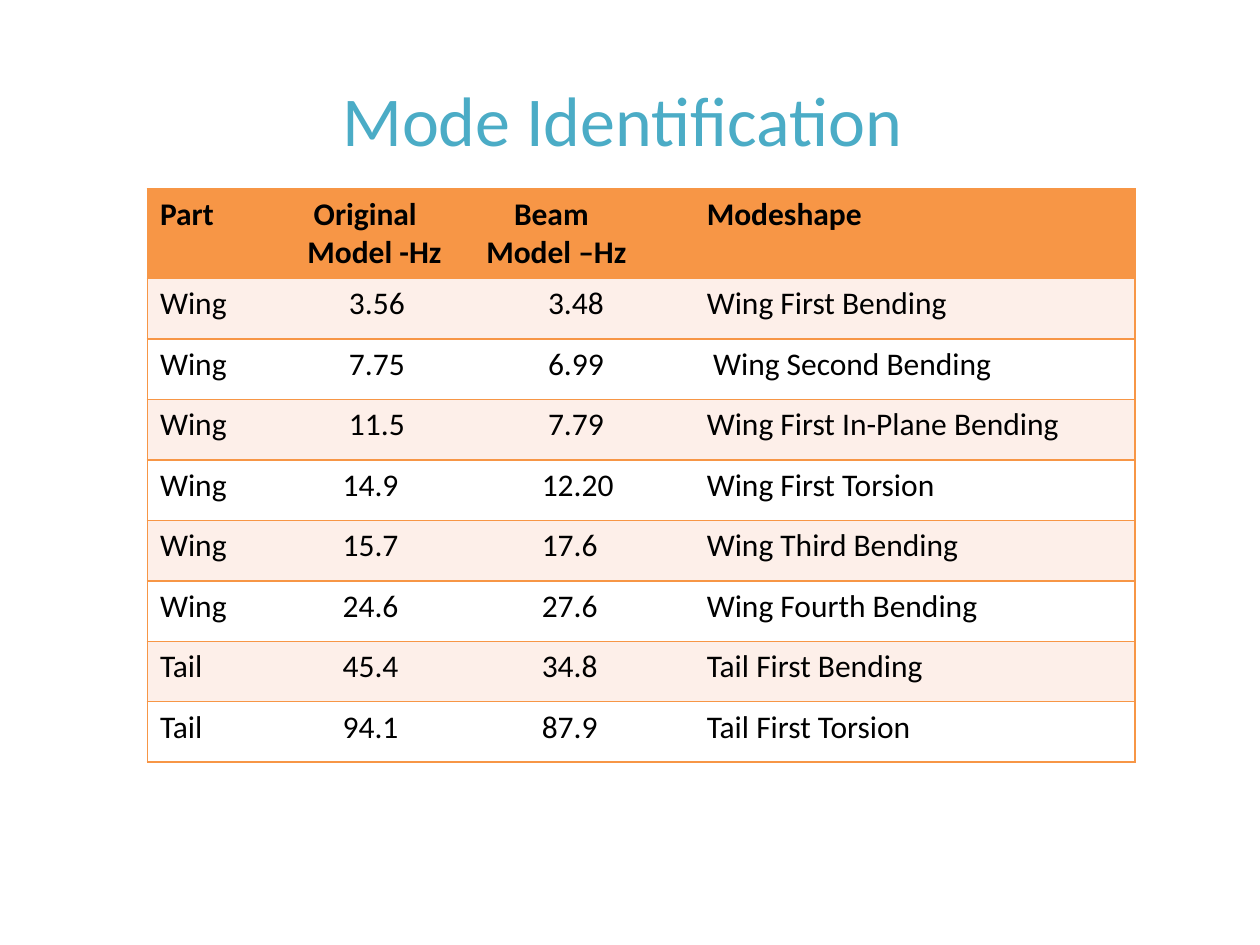
from lxml import etree
from pptx import Presentation
from pptx.dml.color import RGBColor
from pptx.enum import text
from pptx.oxml import ns
from pptx.util import Inches, Pt


def write(tf, words, size=18, color="000000", bold=False, align=text.PP_ALIGN.LEFT, indent=0):
    p = tf.paragraphs[0]
    p.text = words
    p.alignment = align
    p._p.get_or_add_pPr().set("indent", str(Inches(indent)))
    for r in p.runs:
        r.font.name = "Calibri"
        r.font.size = Pt(size)
        r.font.bold = bold
        r.font.color.rgb = RGBColor.from_string(color)


def add_borders(cell, sides, color):
    tcPr = cell._tc.get_or_add_tcPr()
    for i, side in enumerate(sides):
        ln = etree.Element(ns.qn("a:ln" + side), w=str(Pt(1)))
        fill = etree.SubElement(ln, ns.qn("a:solidFill"))
        etree.SubElement(fill, ns.qn("a:srgbClr"), val=color)
        tcPr.insert(i, ln)


ORANGE = "F79646"
HEADERS = ["Part", "Original Model -Hz", "Beam\vModel –Hz", "Modeshape"]
HEADER_INDENTS = [0, 0.05, 0.22, 0]
MODES = [
    ("Wing", "3.56", "3.48", "Wing First Bending"),
    ("Wing", "7.75", "6.99", "Wing Second Bending"),
    ("Wing", "11.5", "7.79", "Wing First In-Plane Bending"),
    ("Wing", "14.9", "12.20", "Wing First Torsion"),
    ("Wing", "15.7", "17.6", "Wing Third Bending"),
    ("Wing", "24.6", "27.6", "Wing Fourth Bending"),
    ("Tail", "45.4", "34.8", "Tail First Bending"),
    ("Tail", "94.1", "87.9", "Tail First Torsion"),
]

prs = Presentation()
prs.slide_width, prs.slide_height = Inches(10), Inches(7.5)
s = prs.slides.add_slide(prs.slide_layouts[6])

sp = s.shapes.add_textbox(Inches(0.5), Inches(0.3), Inches(9), Inches(1.28))
tf = sp.text_frame
tf.word_wrap = True
tf.vertical_anchor = text.MSO_ANCHOR.MIDDLE
write(tf, "Mode Identification ", size=40, color="4BACC6", align=text.PP_ALIGN.CENTER)

sp = s.shapes.add_table(len(MODES) + 1, 4, Inches(1.17), Inches(1.5), Inches(7.84), Inches(4.53))
table = sp.table
table.first_row = True
table.horz_banding = False
style = table._tbl.tblPr.find(ns.qn("a:tableStyleId"))
style.text = "{2D5ABB26-0587-4C30-8999-92F81FD0307C}"
for col, width in zip(table.columns, [1.17, 1.42, 1.75, 3.5]):
    col.width = Inches(width)

for i, row in enumerate([HEADERS] + MODES):
    table.rows[i].height = Inches(0.48 if i else 0.71)
    number_shift = 0.05 if i <= 3 else 0
    indents = [0, 0.28 + number_shift, 0.44 + number_shift, 0.05 if i == 2 else 0]
    for j, words in enumerate(row):
        cell = table.cell(i, j)
        cell.fill.solid()
        color = ("FDEFE9" if i % 2 else "FFFFFF") if i else ORANGE
        cell.fill.fore_color.rgb = RGBColor.from_string(color)
        write(cell.text_frame, words, bold=i == 0, indent=(indents if i else HEADER_INDENTS)[j])
        add_borders(cell, {0: "LTB", 3: "RTB"}.get(j, "TB"), ORANGE)

prs.save("out.pptx")
